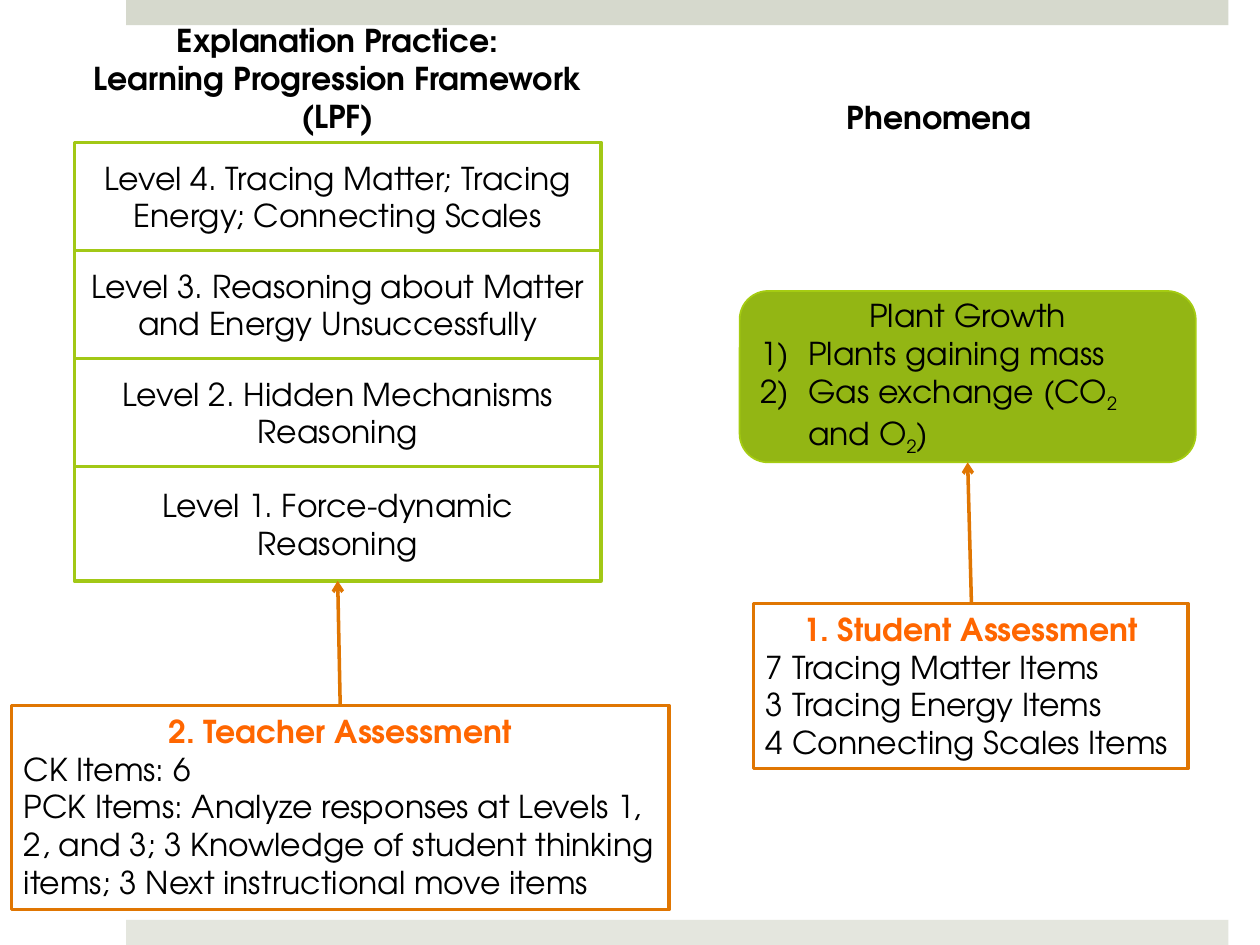
from lxml.etree import SubElement as Sub
from pptx import Presentation
from pptx.dml.color import RGBColor as Rgb
from pptx.enum.shapes import MSO_CONNECTOR as Conn, MSO_SHAPE as Geo
from pptx.enum.text import MSO_ANCHOR as Anchor, MSO_AUTO_SIZE as Fit, PP_ALIGN as Align
from pptx.oxml.ns import qn
from pptx.util import Inches, Pt

FONT = "TeX Gyre Adventor"
HUES = {
    "text": "000000", "white": "FFFFFF", "level": "A2C816",
    "plant": "93B614", "edge": "A5CC12", "link": "E07602",
    "head": "FF6600", "top": "D6D9CD", "foot": "E4E6DE",
}
LEVELS = [
    "Level 4. Tracing Matter; Tracing Energy; Connecting Scales",
    "Level 3. Reasoning about Matter and Energy Unsuccessfully",
    "Level 2. Hidden Mechanisms Reasoning",
    "Level 1. Force-dynamic Reasoning",
]
STUDENT = [
    "7 Tracing Matter Items",
    "3 Tracing Energy Items",
    "4 Connecting Scales Items",
]
TEACHER = [
    "CK Items: 6",
    "PCK Items: Analyze responses at Levels 1, 2, and 3; 3 Knowledge of "
    "student thinking items; 3 Next instructional move items",
]
GASES = ["Gas exchange (CO", "2", " and O", "2", ")"]


def hue(name):
    """Return a named colour."""
    return Rgb.from_string(HUES[name])


def add_run(para, text, color="text", bold=False, sub=False):
    """Add one formatted run to a paragraph."""
    run = para.add_run()
    run.text = text
    font = run.font
    font.name, font.size, font.bold = FONT, Pt(18), bold
    font.color.rgb = hue(color)
    if sub:
        font._element.set("baseline", "-25000")


def add_para(frame, runs, align=Align.LEFT, color="text", bold=False):
    """Fill the first empty paragraph or a new one; digits alone are subscripts."""
    para = frame.paragraphs[0]
    if para.runs:
        para = frame.add_paragraph()
    para.alignment = align
    for text in runs:
        add_run(para, text, color, bold, text.isdigit())
    return para


def number(para):
    """Number a paragraph in the style 1)."""
    props = para._p.get_or_add_pPr()
    props.set("marL", str(Inches(0.38)))
    props.set("indent", str(Inches(-0.38)))
    Sub(props, qn("a:buAutoNum"), type="arabicParenR")


def add_box(slide, area, fill, line=None, width=2, geo=Geo.RECTANGLE):
    """Add a filled shape and return its text frame."""
    box = slide.shapes.add_shape(geo, *map(Inches, area))
    box.shadow.inherit = False
    box.fill.solid()
    box.fill.fore_color.rgb = hue(fill)
    if line:
        box.line.color.rgb = hue(line)
        box.line.width = Pt(width)
    else:
        box.line.fill.background()
    frame = box.text_frame
    frame.word_wrap = True
    frame.vertical_anchor = Anchor.MIDDLE
    return frame


def add_card(slide, area, head, lines):
    """Add an assessment box with a heading and lines."""
    frame = add_box(slide, area, "white", "link")
    frame.vertical_anchor = Anchor.TOP
    add_para(frame, [head], Align.CENTER, "head", True)
    for line in lines:
        add_para(frame, [line])


def add_arrow(slide, start, end):
    """Add an arrow from start to end."""
    link = slide.shapes.add_connector(Conn.STRAIGHT, *map(Inches, start + end))
    link.line.color.rgb = hue("link")
    link.line.width = Pt(2)
    Sub(link.line._get_or_add_ln(), qn("a:tailEnd"), type="arrow")
    Sub(link._element.spPr, qn("a:effectLst"))


def add_title(slide, area, lines):
    """Set the title placeholder."""
    title = slide.shapes.title
    title.left, title.top, title.width, title.height = map(Inches, area)
    frame = title.text_frame
    frame.word_wrap, frame.auto_size = True, Fit.NONE
    frame.vertical_anchor = Anchor.TOP
    for line in lines:
        add_para(frame, [line], Align.CENTER, bold=True)


def add_label(slide, area, text):
    """Add a bold text box."""
    frame = slide.shapes.add_textbox(*map(Inches, area)).text_frame
    frame.word_wrap = True
    add_para(frame, [text], bold=True)


def add_plant(slide):
    """Add the rounded box of plant phenomena."""
    area = (5.87, 2.31, 3.62, 1.36)
    frame = add_box(slide, area, "plant", "edge", 1, Geo.ROUNDED_RECTANGLE)
    add_para(frame, ["Plant Growth"], Align.CENTER)
    for runs in (["Plants gaining mass"], GASES):
        number(add_para(frame, runs))


def main():
    """Build and save the slide."""
    deck = Presentation()
    deck.slide_width, deck.slide_height = Inches(10), Inches(7.5)
    slide = deck.slides.add_slide(deck.slide_layouts[5])
    add_box(slide, (1, 0, 8.75, 0.2), "top")
    add_box(slide, (1, 7.3, 8.75, 0.2), "foot")
    add_title(slide, (0.59, 0.12, 4.18, 1.01),
              ["Explanation Practice:", "Learning Progression Framework (LPF)"])
    for row, text in enumerate(LEVELS):
        tall = 0.91 if text == LEVELS[-1] else 0.86
        frame = add_box(slide, (0.59, 1.13 + row * 0.857, 4.18, tall), "white", "level")
        add_para(frame, [text], Align.CENTER)
    add_label(slide, (6.62, 0.73, 2.01, 0.4), "Phenomena")
    add_plant(slide)
    add_card(slide, (5.98, 4.79, 3.45, 1.31), "1. Student Assessment", STUDENT)
    add_arrow(slide, (7.71, 4.79), (7.68, 3.67))
    add_card(slide, (0.09, 5.6, 5.22, 1.62), "2. Teacher Assessment", TEACHER)
    add_arrow(slide, (2.7, 5.6), (2.68, 4.61))
    deck.save("out.pptx")


if __name__ == "__main__":
    main()
